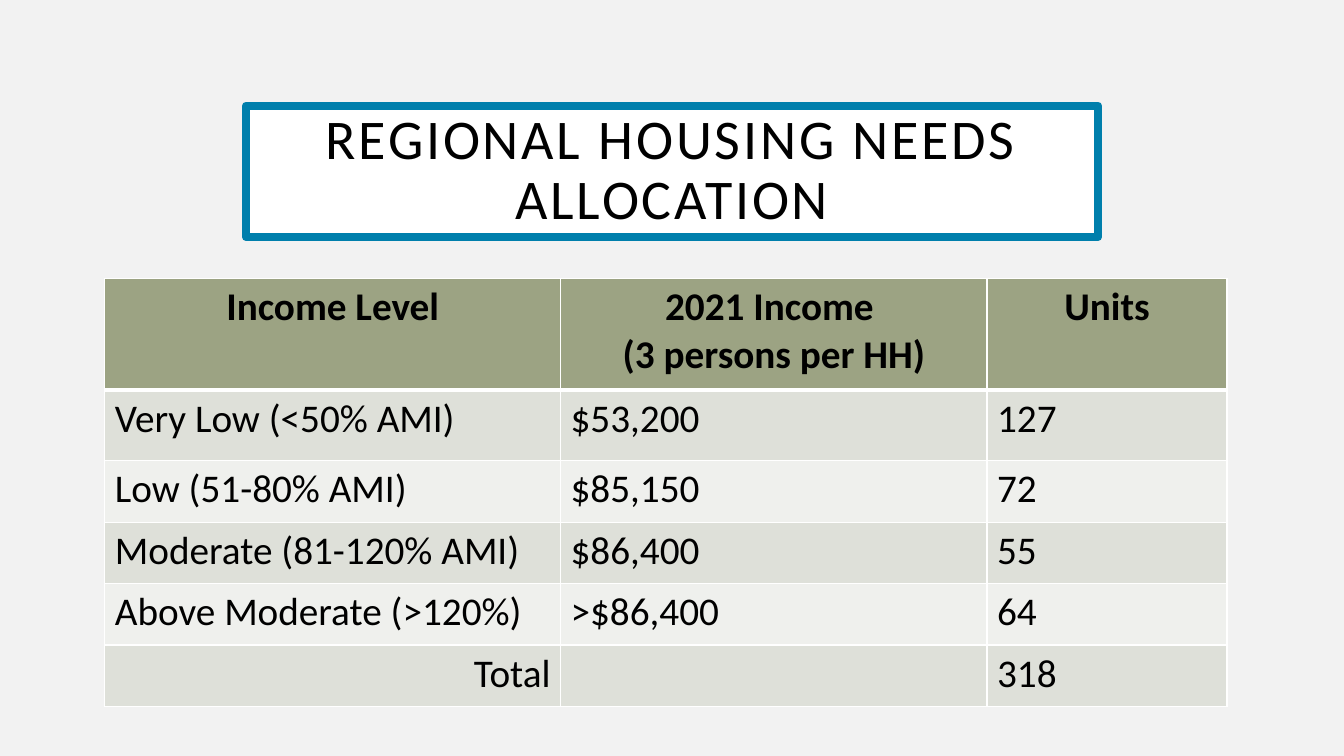
from pptx import Presentation
from pptx.dml.color import RGBColor
from pptx.enum.shapes import MSO_SHAPE as SHAPE
from pptx.enum.text import MSO_ANCHOR as ANCHOR, PP_ALIGN as ALIGN
from pptx.oxml.ns import qn
from pptx.util import Inches, Pt
from lxml.etree import SubElement

BACKGROUND = RGBColor(0xF2, 0xF2, 0xF2)
WHITE = RGBColor(0xFF, 0xFF, 0xFF)
BLACK = RGBColor(0, 0, 0)
BLUE = RGBColor(0x00, 0x7F, 0xAC)
HEADER = RGBColor(0x9C, 0xA3, 0x83)
BANDS = [RGBColor(0xEF, 0xF0, 0xED), RGBColor(0xDE, 0xE0, 0xD9)]
FONT = "Calibri"

COLUMNS = [4.52, 4.23, 2.38]
ROW_HEIGHTS = [1.11, 0.7, 0.61, 0.61, 0.61, 0.61]
ROWS = [
    ["Income Level", "2021 Income \n(3 persons per HH)", "Units"],
    ["Very Low (<50% AMI)", "$53,200", "127"],
    ["Low (51-80% AMI)", "$85,150", "72"],
    ["Moderate (81-120% AMI)", "$86,400", "55"],
    ["Above Moderate (>120%)", ">$86,400", "64"],
    ["Total", "", "318"],
]


def style_paragraph(p, size, align, bold=False):
    p.alignment = align
    p.font.name = FONT
    p.font.size = Pt(size)
    p.font.bold = bold
    p.font.color.rgb = BLACK


def add_title(s, text, left, top, width, height):
    sp = s.shapes.add_shape(SHAPE.RECTANGLE, Inches(left), Inches(top),
                            Inches(width), Inches(height))
    sp.shadow.inherit = False
    sp.fill.solid()
    sp.fill.fore_color.rgb = WHITE
    sp.line.color.rgb = BLUE
    sp.line.width = Pt(6)

    tf = sp.text_frame
    tf.word_wrap = True
    tf.vertical_anchor = ANCHOR.MIDDLE
    tf.margin_left = tf.margin_right = Inches(0.2)
    tf.margin_top = tf.margin_bottom = Inches(0.2)
    p = tf.paragraphs[0]
    r = p.add_run()
    r.text = text
    style_paragraph(p, 40, ALIGN.CENTER)
    p.line_spacing = 0.9
    # Letter spacing in hundredths of a point
    r.font._element.set("spc", "200")


def set_borders(cell, widths):
    tc_pr = cell._tc.get_or_add_tcPr()
    for side, width in zip("LRTB", widths):
        ln = SubElement(tc_pr, qn(f"a:ln{side}"), w=str(Pt(width)))
        fill = SubElement(ln, qn("a:solidFill"))
        SubElement(fill, qn("a:srgbClr"), val=str(WHITE))


def add_income_table(s, left, top):
    table = s.shapes.add_table(
        len(ROWS), len(COLUMNS), Inches(left), Inches(top),
        Inches(sum(COLUMNS)), Inches(sum(ROW_HEIGHTS))).table
    for column, width in zip(table.columns, COLUMNS):
        column.width = Inches(width)
    for row, height in zip(table.rows, ROW_HEIGHTS):
        row.height = Inches(height)

    for i, texts in enumerate(ROWS):
        is_header = i == 0
        for j, text in enumerate(texts):
            cell = table.cell(i, j)
            # Thick rule between the header and the body
            set_borders(cell, [1, 1, 3 if i == 1 else 1, 3 if is_header else 1])
            cell.fill.solid()
            cell.fill.fore_color.rgb = HEADER if is_header else BANDS[i % 2]
            cell.text = text
            align = (ALIGN.CENTER if is_header
                     else ALIGN.RIGHT if text == "Total" else ALIGN.LEFT)
            for p in cell.text_frame.paragraphs:
                style_paragraph(p, 28, align, bold=is_header)


def main():
    prs = Presentation()
    prs.slide_width = Inches(13.33)
    prs.slide_height = Inches(7.5)
    s = prs.slides.add_slide(prs.slide_layouts[6])
    s.background.fill.solid()
    s.background.fill.fore_color.rgb = BACKGROUND

    add_title(s, "REGIONAL HOUSING NEEDS ALLOCATION", 2.44, 1.05, 8.45, 1.3)
    add_income_table(s, 1.04, 2.76)
    prs.save("out.pptx")


if __name__ == "__main__":
    main()
